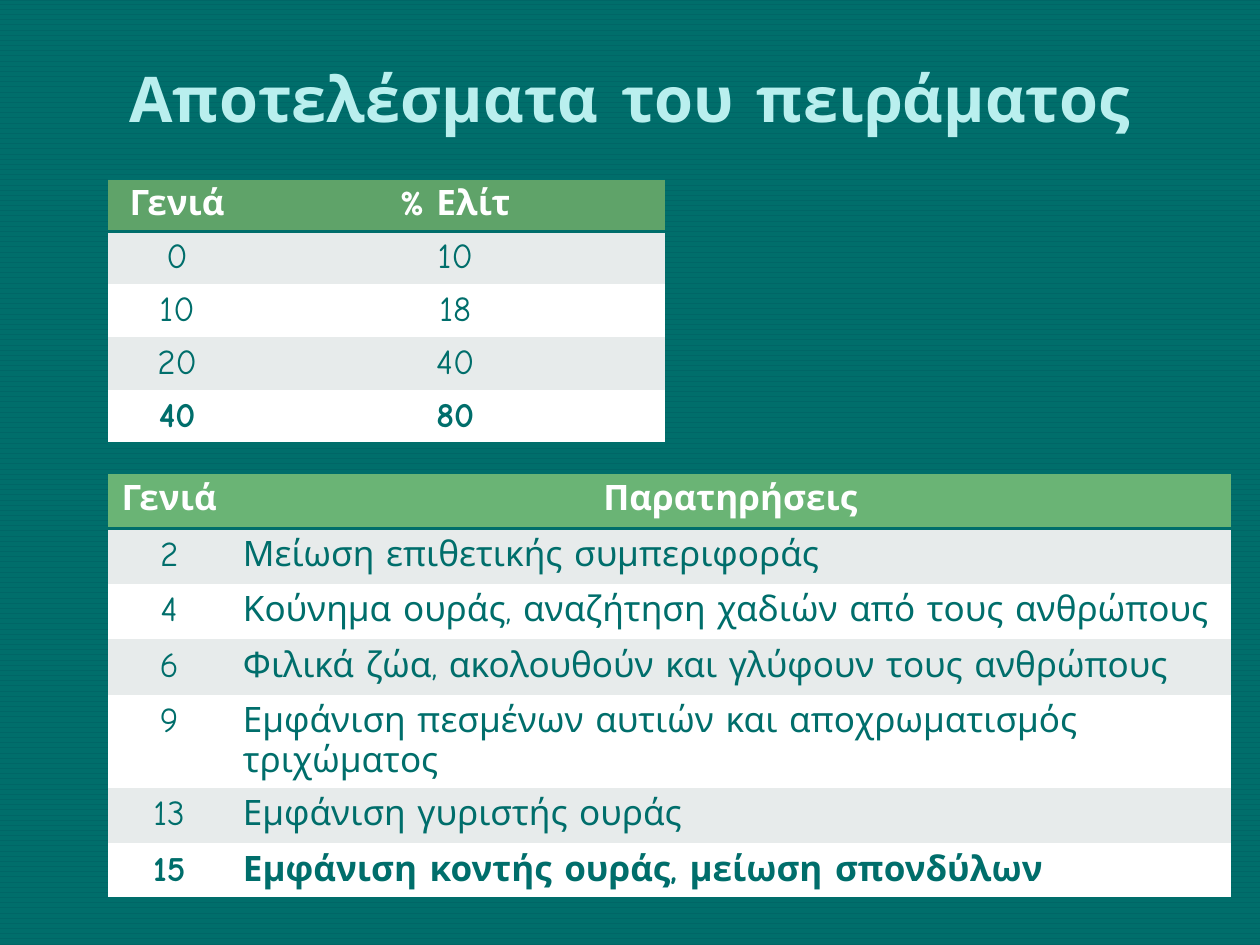
import pptx
import pptx.util
from lxml import etree
from pptx.dml.color import RGBColor
from pptx.enum.dml import MSO_PATTERN
from pptx.enum.text import MSO_ANCHOR, PP_ALIGN
from pptx.oxml.ns import qn
from pptx.util import Pt

FONT = "Comic Neue"
TEAL = RGBColor(0x00, 0x6E, 0x6B)
DARK_TEAL = RGBColor(0x00, 0x66, 0x66)
PALE_AQUA = RGBColor(0xB9, 0xEF, 0xEE)
GREEN = RGBColor(0x5F, 0xA3, 0x69)
LIGHT_GREEN = RGBColor(0x6A, 0xB4, 0x75)
GREY = RGBColor(0xE7, 0xEB, 0xEB)
WHITE = RGBColor(0xFF, 0xFF, 0xFF)
NO_STYLE_NO_GRID = "{2D5ABB26-0587-4C30-8999-92F81FD0307C}"

ELITE_ROWS = [
    ("Γενιά", "% Ελίτ"),
    ("0", "10"),
    ("10", "18"),
    ("20", "40"),
    ("40", "80"),
]
OBSERVATION_ROWS = [
    ("Γενιά", "Παρατηρήσεις"),
    ("2", "Μείωση επιθετικής συμπεριφοράς"),
    ("4", "Κούνημα ουράς, αναζήτηση χαδιών από τους ανθρώπους"),
    ("6", "Φιλικά ζώα, ακολουθούν και γλύφουν τους ανθρώπους"),
    ("9", "Εμφάνιση πεσμένων αυτιών και αποχρωματισμός τριχώματος"),
    ("13", "Εμφάνιση γυριστής ουράς"),
    ("15", "Εμφάνιση κοντής ουράς, μείωση σπονδύλων"),
]


def paint_background(page):
    fill = page.background.fill
    fill.patterned()
    fill.pattern = MSO_PATTERN.DARK_HORIZONTAL
    fill.fore_color.rgb = TEAL
    fill.back_color.rgb = DARK_TEAL


def format_text(frame, text, size, color, bold, align):
    frame.text = text
    para = frame.paragraphs[0]
    para.alignment = align
    para.font.name = FONT
    para.font.size = Pt(size)
    para.font.bold = bold
    para.font.color.rgb = color


def place_title(page, text, left, top, width, height):
    title = page.shapes.title
    title.left, title.top = Pt(left), Pt(top)
    title.width, title.height = Pt(width), Pt(height)
    title.text_frame.vertical_anchor = MSO_ANCHOR.MIDDLE
    format_text(title.text_frame, text, 36, PALE_AQUA, True, PP_ALIGN.CENTER)


def add_borders(cell, sides):
    """Draw 2 pt teal lines on the given sides, "T" before "B"."""
    properties = cell._tc.get_or_add_tcPr()
    for position, side in enumerate(sides):
        line = etree.Element(qn(f"a:ln{side}"), w=str(Pt(2)))
        solid = etree.SubElement(line, qn("a:solidFill"))
        etree.SubElement(solid, qn("a:srgbClr"), val=str(TEAL))
        properties.insert(position, line)


def place_table(page, rows, left, top, column_widths, row_height,
                header_color, body_align, side_margin):
    """Add a banded table whose header and last row are bold."""
    frame = page.shapes.add_table(
        len(rows), len(column_widths), Pt(left), Pt(top),
        Pt(sum(column_widths)), Pt(row_height * len(rows)))
    table = frame.table
    table._tbl.tblPr.find(qn("a:tableStyleId")).text = NO_STYLE_NO_GRID
    for column, width in zip(table.columns, column_widths):
        column.width = Pt(width)
    last = len(rows) - 1
    for row_index, texts in enumerate(rows):
        table.rows[row_index].height = Pt(row_height)
        header = row_index == 0
        band = GREY if row_index % 2 else WHITE
        for column_index, text in enumerate(texts):
            cell = table.cell(row_index, column_index)
            cell.margin_left = cell.margin_right = Pt(side_margin)
            cell.fill.solid()
            cell.fill.fore_color.rgb = header_color if header else band
            centred = header or column_index == 0
            format_text(cell.text_frame, text, 20,
                        WHITE if header else TEAL,
                        row_index in (0, last),
                        PP_ALIGN.CENTER if centred else body_align)
            if header:
                add_borders(cell, "TB")
            elif row_index == last:
                add_borders(cell, "B")


def main():
    deck = pptx.Presentation()
    deck.slide_width, deck.slide_height = Pt(720), Pt(540)
    page = deck.slides.add_slide(deck.slide_layouts.get_by_name("Title Only"))
    paint_background(page)
    place_title(page, "Αποτελέσματα του πειράματος", 36, 21.6, 648, 68.4)
    place_table(page, ELITE_ROWS, 61.8, 101.8, (78.8, 239.2), 30,
                GREEN, PP_ALIGN.CENTER, 10.8)
    place_table(page, OBSERVATION_ROWS, 61.8, 270.2, (69.8, 571.6), 31.7,
                LIGHT_GREEN, PP_ALIGN.LEFT, 7.2)
    deck.save("out.pptx")


if __name__ == "__main__":
    main()
